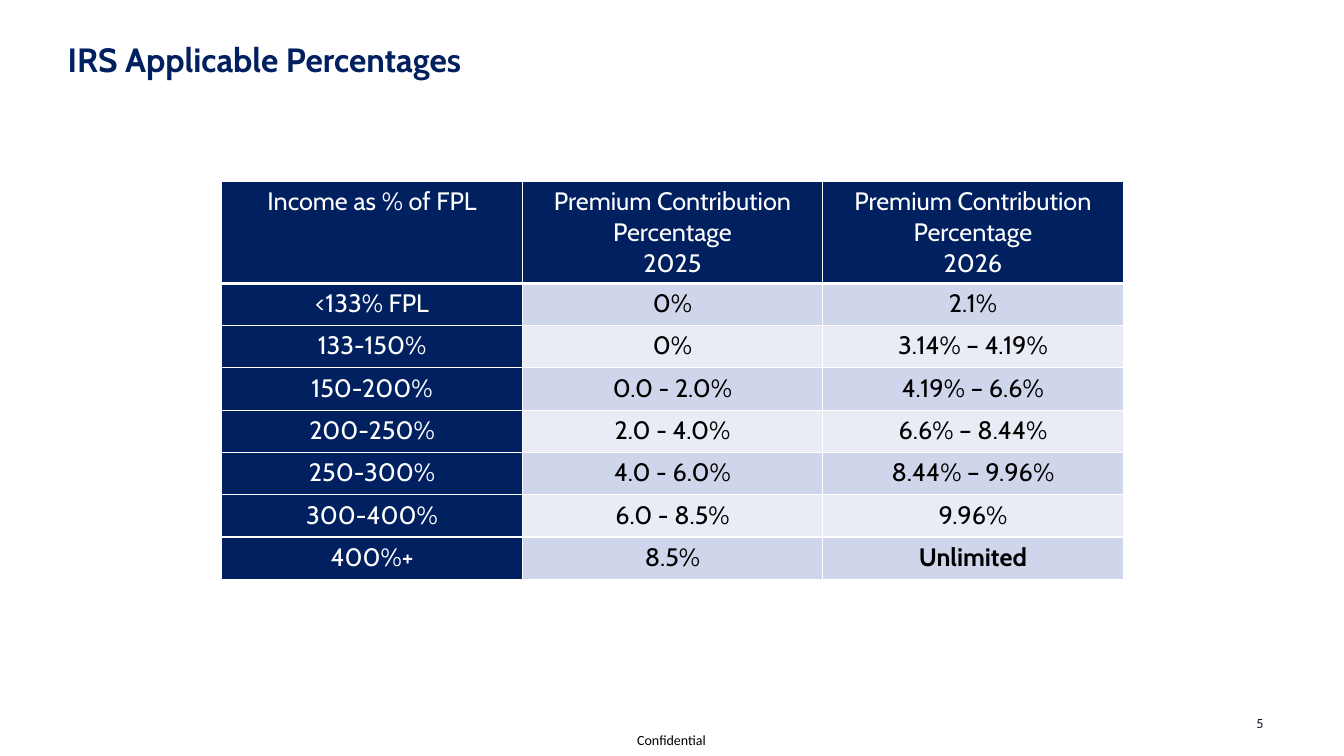
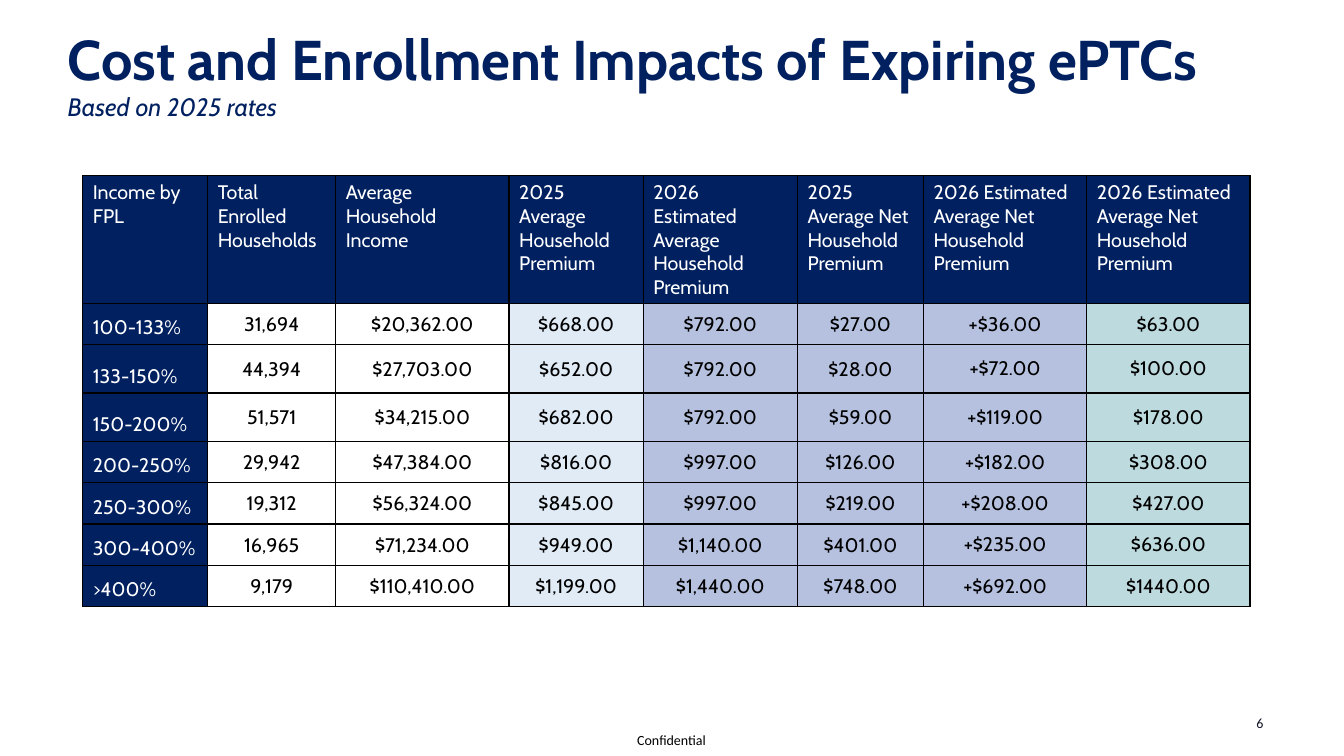
from dataclasses import dataclass

from lxml import etree
from pptx import Presentation
from pptx import util as u
from pptx.dml.color import RGBColor
from pptx.enum import text
from pptx.oxml import ns

COLORS = {
    "navy": "002060",
    "white": "FFFFFF",
    "black": "000000",
    "page": "121429",
    "band_dark": "CFD5EA",
    "band_light": "E9EBF5",
    "pale_blue": "E0EBF6",
    "periwinkle": "B5C1DF",
    "teal": "BDDADF",
}
HEADING_FONT = "Cabin"
FOOTER_FONT = "Calibri"
LEFT, CENTER = text.PP_ALIGN.LEFT, text.PP_ALIGN.CENTER
TOP, MIDDLE, BOTTOM = text.MSO_ANCHOR.TOP, text.MSO_ANCHOR.MIDDLE, text.MSO_ANCHOR.BOTTOM


@dataclass(frozen=True)
class RunStyle:
    size: float
    color: str
    font: str = HEADING_FONT
    bold: bool = False
    italic: bool = False


@dataclass(frozen=True)
class CellStyle:
    fill: str | None
    color: str = "black"
    align: int = CENTER
    anchor: int = TOP
    tight: bool = False


@dataclass(frozen=True)
class Grid:
    left: float
    top: float
    widths: list[float]
    heights: list[float]
    rows: list[tuple[str, ...]]
    size: float
    header: CellStyle
    bands: list[list[CellStyle]]
    border: str
    border_width: float
    header_rule: float
    bold_text: tuple[str, ...] = ()


TITLE = RunStyle(24, "navy", bold=True)
LARGE_TITLE = RunStyle(40, "navy", bold=True)
SUBTITLE = RunStyle(18, "navy", italic=True)
PAGE_NUMBER = RunStyle(10, "page", FOOTER_FONT)
FOOTER = RunStyle(10, "black", FOOTER_FONT)

INCOME = CellStyle("navy", "white")
PERCENTAGES = Grid(
    left=2.2, top=1.8, widths=[2.98] * 3, heights=[1.01] + [0.42] * 7,
    rows=[
        ("Income as % of FPL", "Premium Contribution\nPercentage\n2025",
         "Premium Contribution\nPercentage\n2026"),
        ("<133% FPL", "0%", "2.1%"),
        ("133-150%", "0%", "3.14% – 4.19%"),
        ("150-200%", "0.0 - 2.0%", "4.19% – 6.6%"),
        ("200-250%", "2.0 - 4.0%", "6.6% – 8.44%"),
        ("250-300%", "4.0 - 6.0%", "8.44% – 9.96%"),
        ("300-400%", "6.0 - 8.5%", "9.96%"),
        ("400%+", "8.5%", "Unlimited"),
    ],
    size=18, header=INCOME,
    bands=[[INCOME] + [CellStyle(band)] * 2 for band in ("band_dark", "band_light")],
    border="white", border_width=0.91, header_rule=2.75, bold_text=("Unlimited",),
)

IMPACTS = Grid(
    left=0.82, top=1.74, widths=[1.24, 1.27, 1.72, 1.33, 1.53, 1.25, 1.62, 1.62],
    heights=[1.27, 0.41, 0.48, 0.48, 0.41, 0.41, 0.41, 0.41],
    rows=[
        ("Income by FPL", "Total Enrolled Households", "Average Household Income",
         "2025\nAverage Household Premium", "2026\nEstimated\nAverage Household Premium",
         "2025\nAverage Net\nHousehold Premium",
         "2026 Estimated Average Net\nHousehold Premium",
         "2026 Estimated Average Net Household Premium"),
        ("100-133%", "31,694", "$20,362.00", "$668.00", "$792.00", "$27.00", "+$36.00", "$63.00"),
        ("133-150%", "44,394", "$27,703.00", "$652.00", "$792.00", "$28.00", "+$72.00", "$100.00"),
        ("150-200%", "51,571", "$34,215.00", "$682.00", "$792.00", "$59.00", "+$119.00", "$178.00"),
        ("200-250%", "29,942", "$47,384.00", "$816.00", "$997.00", "$126.00", "+$182.00", "$308.00"),
        ("250-300%", "19,312", "$56,324.00", "$845.00", "$997.00", "$219.00", "+$208.00", "$427.00"),
        ("300-400%", "16,965", "$71,234.00", "$949.00", "$1,140.00", "$401.00", "+$235.00", "$636.00"),
        (">400%", "9,179", "$110,410.00", "$1,199.00", "$1,440.00", "$748.00", "+$692.00", "$1440.00"),
    ],
    size=14, header=CellStyle("navy", "white", LEFT),
    bands=[[
        CellStyle("navy", "white", LEFT, BOTTOM),
        *[CellStyle(fill, anchor=MIDDLE, tight=True)
          for fill in (None, None, "pale_blue", "periwinkle", "periwinkle")],
        *[CellStyle(fill, anchor=MIDDLE) for fill in ("periwinkle", "teal")],
    ]],
    border="black", border_width=1, header_rule=1,
)


def rgb(name: str) -> RGBColor:
    return RGBColor.from_string(COLORS[name])


def add_run(paragraph, words: str, style: RunStyle) -> None:
    run = paragraph.add_run()
    run.text = words
    font = run.font
    font.name, font.size = style.font, u.Pt(style.size)
    font.bold, font.italic = style.bold, style.italic
    font.color.rgb = rgb(style.color)


def set_margins(holder, left: float, top: float, right: float, bottom: float) -> None:
    holder.margin_left, holder.margin_top = u.Inches(left), u.Inches(top)
    holder.margin_right, holder.margin_bottom = u.Inches(right), u.Inches(bottom)


def add_title(slide, top: float, lines: list[tuple[str, RunStyle]]) -> None:
    title = slide.shapes.title
    title.left, title.top = u.Inches(0.67), u.Inches(top)
    title.width, title.height = u.Inches(12), u.Inches(0.67)
    frame = title.text_frame
    frame.auto_size = text.MSO_AUTO_SIZE.NONE
    frame.vertical_anchor = MIDDLE
    set_margins(frame, 0, 0.05, 0, 0.05)
    heading = frame.paragraphs[0]
    heading.alignment = LEFT
    for index, (words, style) in enumerate(lines):
        if index:
            heading.add_line_break()
        add_run(heading, words, style)


def add_label(slide, box: tuple[float, ...], words: str, style: RunStyle,
              anchor: int = TOP, inset: float = 0) -> None:
    frame = slide.shapes.add_textbox(*map(u.Inches, box)).text_frame
    frame.word_wrap = False
    frame.vertical_anchor = anchor
    set_margins(frame, 0, inset, 0, inset)
    add_run(frame.paragraphs[0], words, style)


def add_footer(slide, number: int) -> None:
    add_label(slide, (12.46, 7.02, 0.42, 0.3), str(number), PAGE_NUMBER, MIDDLE, 0.1)
    add_label(slide, (6.32, 7.26, 0.72, 0.17), "Confidential", FOOTER)


def set_border(cell, edge: str, color: str, width: float) -> None:
    properties = cell._tc.get_or_add_tcPr()
    line = etree.SubElement(properties, ns.qn(f"a:ln{edge}"), w=str(int(u.Pt(width))))
    fill = etree.SubElement(line, ns.qn("a:solidFill"))
    etree.SubElement(fill, ns.qn("a:srgbClr"), val=COLORS[color])


def fill_cell(cell, words: str, style: CellStyle, grid: Grid) -> None:
    if style.fill:
        cell.fill.solid()
        cell.fill.fore_color.rgb = rgb(style.fill)
    else:
        cell.fill.background()
    cell.vertical_anchor = style.anchor
    if style.tight:
        set_margins(cell, 0.01, 0.01, 0.01, 0)
    frame = cell.text_frame
    run_style = RunStyle(grid.size, style.color, bold=words in grid.bold_text)
    for index, line in enumerate(words.split("\n")):
        paragraph = frame.add_paragraph() if index else frame.paragraphs[0]
        paragraph.alignment = style.align
        add_run(paragraph, line, run_style)


def add_grid(slide, grid: Grid) -> None:
    table = slide.shapes.add_table(
        len(grid.rows), len(grid.widths), u.Inches(grid.left), u.Inches(grid.top),
        u.Inches(sum(grid.widths)), u.Inches(sum(grid.heights))).table
    table.first_row = table.horz_banding = False
    for column, width in zip(table.columns, grid.widths):
        column.width = u.Inches(width)
    for row, height in zip(table.rows, grid.heights):
        row.height = u.Inches(height)
    for r, values in enumerate(grid.rows):
        band = grid.bands[(r - 1) % len(grid.bands)] if r else [grid.header] * len(values)
        for c, (words, style) in enumerate(zip(values, band)):
            cell = table.cell(r, c)
            for edge in "LRTB":
                is_header_rule = (r, edge) in ((0, "B"), (1, "T"))
                width = grid.header_rule if is_header_rule else grid.border_width
                set_border(cell, edge, grid.border, width)
            fill_cell(cell, words, style, grid)


def add_page(deck, number: int, title_top: float,
             title_lines: list[tuple[str, RunStyle]], grid: Grid) -> None:
    slide = deck.slides.add_slide(deck.slide_layouts[5])
    add_footer(slide, number)
    add_title(slide, title_top, title_lines)
    add_grid(slide, grid)


def main() -> None:
    deck = Presentation()
    deck.slide_width, deck.slide_height = u.Inches(13.33), u.Inches(7.5)
    add_page(deck, 5, 0.25, [("IRS Applicable Percentages", TITLE)], PERCENTAGES)
    add_page(deck, 6, 0.39, [
        ("Cost and Enrollment Impacts of Expiring ePTCs", LARGE_TITLE),
        ("Based on 2025 rates", SUBTITLE),
    ], IMPACTS)
    deck.save("out.pptx")


if __name__ == "__main__":
    main()
